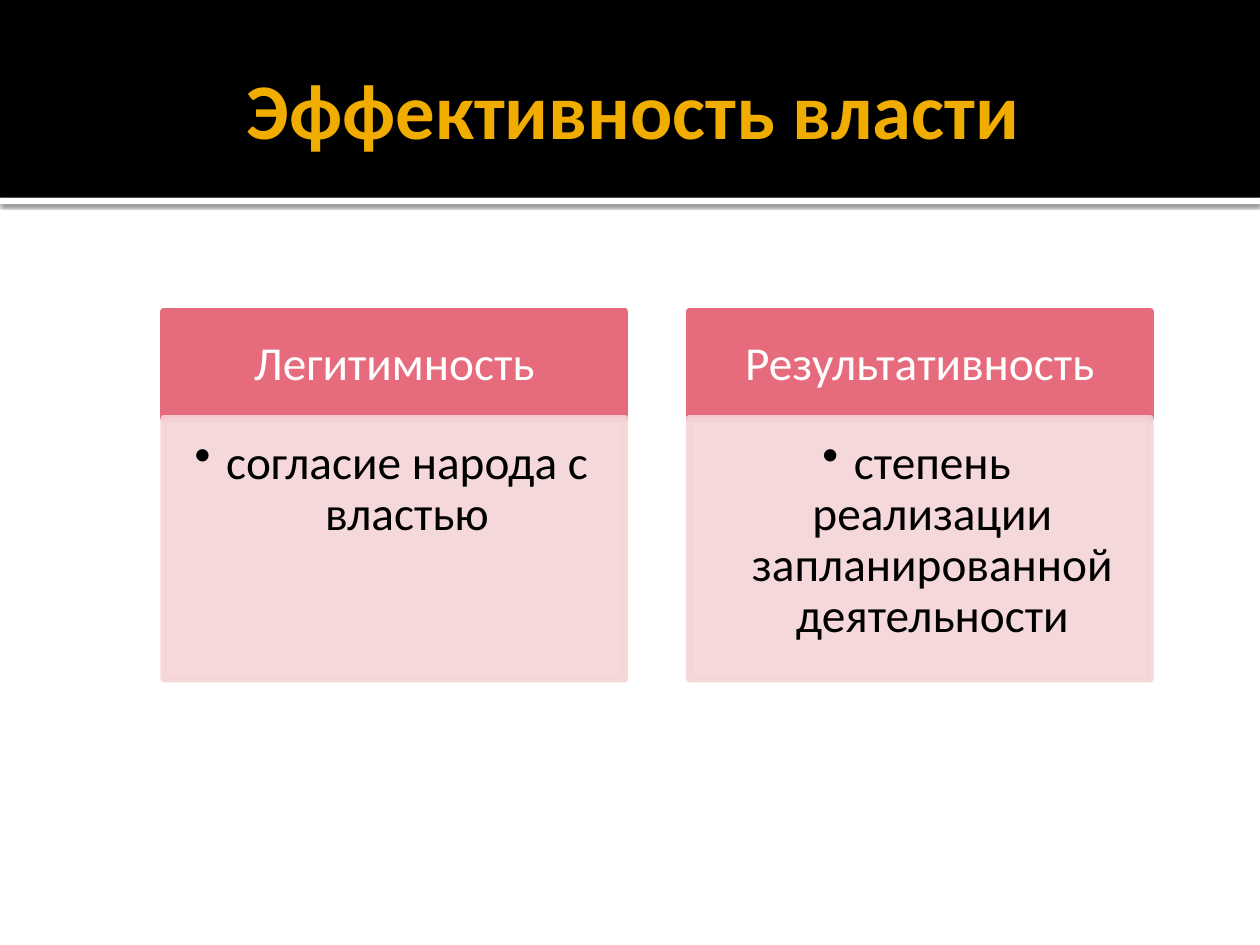
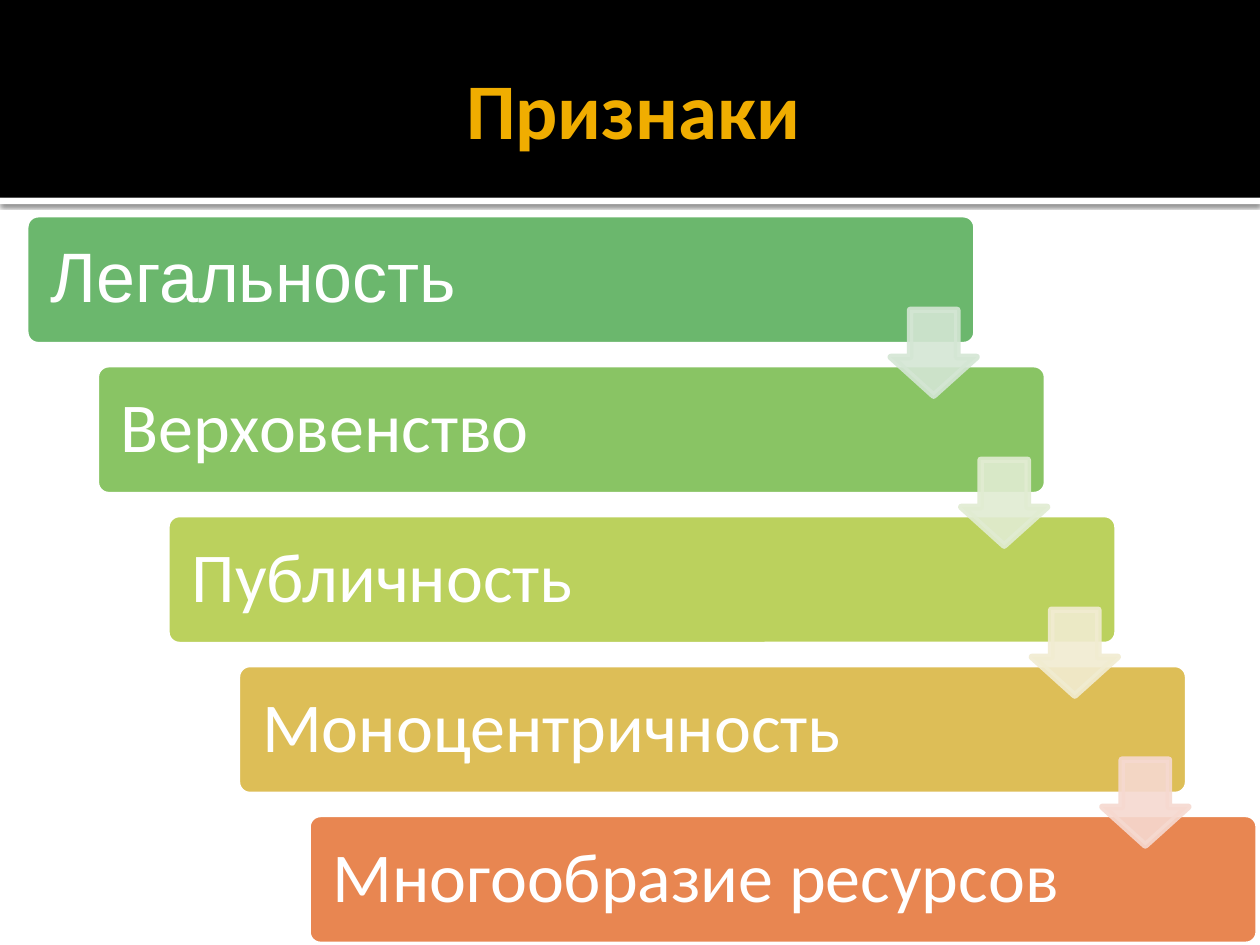
from lxml import etree
from pptx import Presentation
from pptx.dml.color import RGBColor
from pptx.enum.shapes import MSO_SHAPE
from pptx.enum.text import MSO_ANCHOR, MSO_AUTO_SIZE, PP_ALIGN
from pptx.oxml.ns import qn
from pptx.util import Inches, Pt

RECT = MSO_SHAPE.RECTANGLE
ROUNDED = MSO_SHAPE.ROUNDED_RECTANGLE
DOWN_ARROW = MSO_SHAPE.DOWN_ARROW
LEFT, CENTER = PP_ALIGN.LEFT, PP_ALIGN.CENTER
TOP, MIDDLE = MSO_ANCHOR.TOP, MSO_ANCHOR.MIDDLE

FONT = "Calibri"
BLACK, WHITE, GOLD = "000000", "FFFFFF", "F0AD00"
ROSE, PALE_ROSE = "E66C7D", "F5D4D7"
OUTLINE = 3.78  # points

CARDS = [
    ("Легитимность", "согласие народа с властью"),
    ("Результативность", "степень реализации запланированной деятельности"),
]
# Label, font, bar colour, colour of the arrow to the next bar
FEATURES = [
    ("Легальность", "Arial", "6BB76D", "D4E6D4"),
    ("Верховенство", FONT, "89C464", "E1ECD2"),
    ("Публичность", FONT, "BBD15D", "F1ECD1"),
    ("Моноцентричность", FONT, "DDBE57", "F6D9D0"),
    ("Многообразие ресурсов", FONT, "E88651", None),
]


def rgb(hex_colour):
    return RGBColor.from_string(hex_colour)


def sub(parent, tag, **attributes):
    return etree.SubElement(parent, qn(tag), attributes)


def add_block(slide, kind, box, fill, line=None, alpha=None, adjustments=()):
    """Add a filled shape; alpha is the opacity of fill and line in percent."""
    block = slide.shapes.add_shape(kind, *map(Inches, box))
    block.shadow.inherit = False
    for index, value in enumerate(adjustments):
        block.adjustments[index] = value
    block.fill.solid()
    block.fill.fore_color.rgb = rgb(fill)
    if line:
        block.line.color.rgb = rgb(line)
        block.line.width = Pt(OUTLINE)
        sub(block.element.spPr.find(qn("a:ln")), "a:round")
    else:
        block.line.fill.background()
    if alpha:
        for colour in block.element.spPr.iter(qn("a:srgbClr")):
            sub(colour, "a:alpha", val=str(alpha * 1000))
    return block


def write(shape, text, size, colour=WHITE, font=FONT, bold=False, align=CENTER,
          anchor=MIDDLE, margins=(0.1, 0.05, 0.05, 0.05), spacing=None, bullet=False):
    frame = shape.text_frame
    frame.word_wrap = True
    frame.auto_size = MSO_AUTO_SIZE.NONE
    frame.vertical_anchor = anchor
    (frame.margin_left, frame.margin_top,
     frame.margin_right, frame.margin_bottom) = map(Inches, margins)
    paragraph = frame.paragraphs[0]
    paragraph.alignment = align
    paragraph.line_spacing = spacing
    run = paragraph.add_run()
    run.text = text
    run.font.name = font
    run.font.size = Pt(size)
    run.font.bold = bold
    run.font.color.rgb = rgb(colour)
    if bullet:
        properties = paragraph._p.get_or_add_pPr()
        properties.set("marL", str(Inches(0.25)))
        properties.set("indent", str(-Inches(0.25)))
        sub(properties, "a:buChar", char="•")


def add_header_bands(layout, slide):
    """Build the header bands and place them on the layout behind the titles."""
    stripe = add_block(slide, RECT, (0, 1.57, 10, 0.05), WHITE)
    effects = stripe.element.spPr.find(qn("a:effectLst"))
    shadow = sub(effects, "a:outerShdw", blurRad=str(Pt(2.5)), dist=str(Pt(0.8)),
                 dir="5400000", algn="t", rotWithShape="0")
    sub(sub(shadow, "a:srgbClr", val=BLACK), "a:alpha", val="60000")
    band = add_block(slide, RECT, (0, 0, 10, 1.57), BLACK)
    for position, part in enumerate((stripe, band), start=2):
        layout.shapes.element.insert(position, part.element)


def add_title(slide, text):
    title = slide.shapes.title
    title.left, title.top, title.width, title.height = map(Inches, (0.5, 0.17, 9, 1.37))
    write(title, text, 45, colour=GOLD, bold=True)


def add_card(slide, left, heading, description):
    width, top, head_height = 3.66, 2.47, 0.85
    head = add_block(slide, RECT, (left, top, width, head_height), ROSE, line=ROSE)
    write(head, heading, 27, margins=(0.21, 0.12, 0.21, 0.12), spacing=0.9)
    body = add_block(slide, RECT, (left, top + head_height, width, 2.07),
                     PALE_ROSE, line=PALE_ROSE, alpha=90)
    write(body, description, 27, colour=BLACK, anchor=TOP,
          margins=(0.16, 0.16, 0.21, 0.24), spacing=0.9, bullet=True)


def add_staircase(slide, features):
    left, top, width, height = 0.2, 1.7, 7.55, 1.04
    step_x, step_y, arrow_size, arrow_drop = 0.56, 1.19, 0.68, 0.76
    corners = [(left + step_x * i, top + step_y * i) for i in range(len(features))]
    for (x, y), (label, font, colour, _) in zip(corners, features):
        bar = add_block(slide, ROUNDED, (x, y, width, height), colour,
                        line=WHITE, adjustments=[0.1])
        write(bar, label, 40, font=font, align=LEFT, margins=[0.17] * 4, spacing=0.9)
    # Arrows lie over the bars, flush with each bar's right end
    for (x, y), (*_, colour) in zip(corners, features):
        if colour:
            box = (x + width - arrow_size, y + arrow_drop, arrow_size, arrow_size)
            add_block(slide, DOWN_ARROW, box, colour, line=colour, alpha=90,
                      adjustments=[0.55, 0.45])


def main():
    deck = Presentation()
    deck.slide_width, deck.slide_height = Inches(10), Inches(7.5)
    title_only = deck.slide_layouts[5]

    # Effectiveness of power: two cards
    effectiveness = deck.slides.add_slide(title_only)
    add_header_bands(title_only, effectiveness)
    add_title(effectiveness, "Эффективность власти")
    for column, (heading, description) in enumerate(CARDS):
        add_card(effectiveness, 1.3 + 4.17 * column, heading, description)

    # Features of power: descending bars
    features = deck.slides.add_slide(title_only)
    add_title(features, "Признаки")
    add_staircase(features, FEATURES)

    deck.save("out.pptx")


if __name__ == "__main__":
    main()
